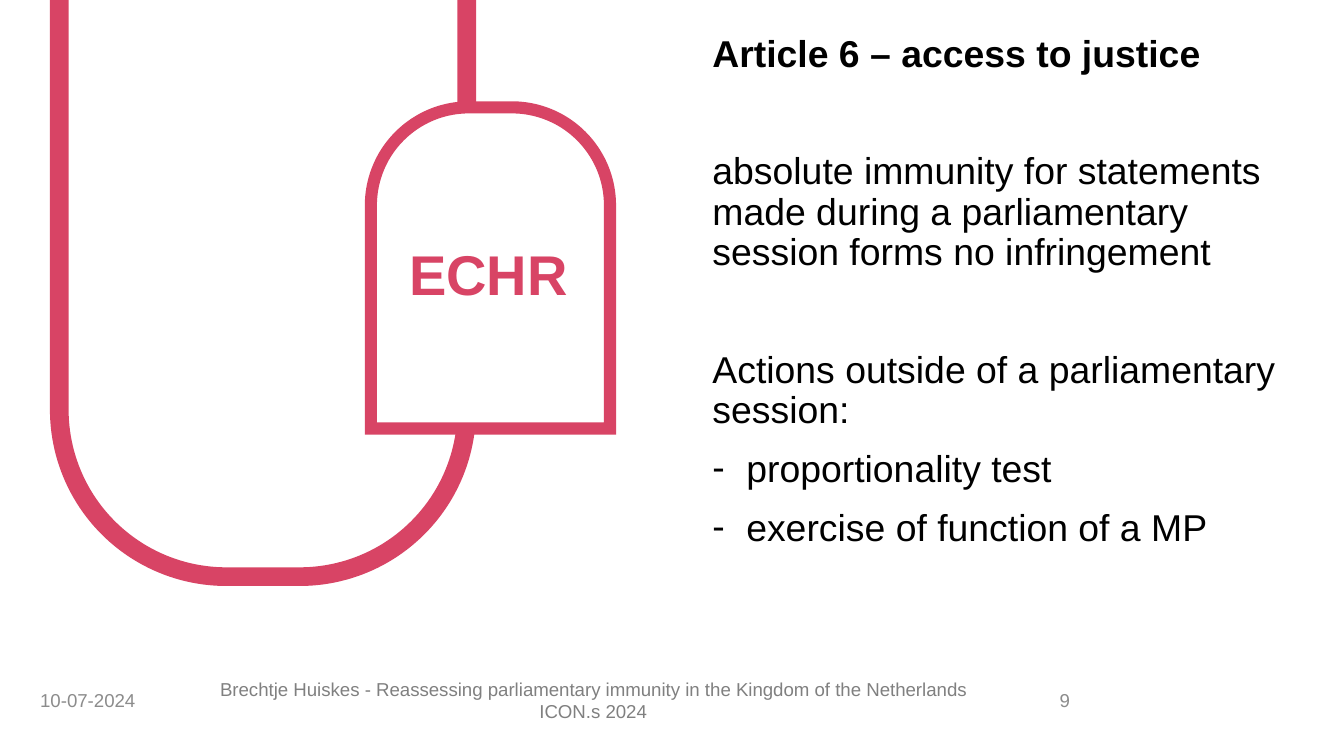
"""Build the slide on Article 6 ECHR and access to justice."""
from dataclasses import dataclass
from typing import Optional

from lxml.etree import SubElement
from pptx import Presentation
from pptx.dml.color import RGBColor
from pptx.enum.shapes import MSO_SHAPE
from pptx.enum.text import MSO_ANCHOR, MSO_AUTO_SIZE, PP_ALIGN
from pptx.oxml.ns import qn
from pptx.shapes.autoshape import Shape
from pptx.slide import Slide
from pptx.util import Cm, Pt


@dataclass(frozen=True)
class Theme:
    """Colours, font and type sizes in points."""
    font: str = "Arial"
    rose: str = "D84465"
    white: str = "FFFFFF"
    black: str = "000000"
    pale: str = "8C8C8C"
    grey: str = "808080"
    title: int = 30
    body: int = 20
    small: int = 10


@dataclass(frozen=True)
class Box:
    """Place and size in centimetres."""
    left: float
    top: float
    width: float
    height: float


@dataclass(frozen=True)
class Arch:
    """Outline with two round corners."""
    box: Box
    line: float
    turn: int = 0
    fill: Optional[str] = None


@dataclass(frozen=True)
class Item:
    """One paragraph of the body."""
    text: str
    gap: float = 10
    bold: bool = False
    dash: bool = False


@dataclass(frozen=True)
class Note:
    """One text in the footer row."""
    text: str
    left: float
    width: float
    align: PP_ALIGN
    tint: str


THEME = Theme()
WIDE_GAP = 41.5
INDENT = Cm(0.64)
FOOT_TOP, FOOT_HEIGHT = 12.85, 0.76
TITLE_BOX = Box(7.11, 2.44, 4.24, 5.61)
BODY_BOX = Box(13.21, 0.53, 11.71, 11)

ARCHES = [
    Arch(Box(1.12, -0.56, 7.7, 11.46), 10, turn=180),
    Arch(Box(7.01, 2.03, 4.52, 6.07), 6.5, fill=THEME.white),
]
ITEMS = [
    Item("Article 6 – access to justice", gap=0, bold=True),
    Item("absolute immunity for statements made during a parliamentary "
         "session forms no infringement", gap=WIDE_GAP),
    Item("Actions outside of a parliamentary session:", gap=WIDE_GAP),
    Item("proportionality test", dash=True),
    Item("exercise of function of a MP", dash=True),
]
NOTES = [
    Note("10-07-2024", 0.51, 2.46, PP_ALIGN.LEFT, THEME.pale),
    Note("Brechtje Huiskes - Reassessing parliamentary immunity in the "
         "Kingdom of the Netherlands ICON.s 2024",
         3.45, 15.52, PP_ALIGN.CENTER, THEME.grey),
    Note("9", 19.33, 1.14, PP_ALIGN.RIGHT, THEME.pale),
]


def place(shape: Shape, box: Box) -> None:
    """Move and size a shape."""
    shape.left, shape.top = Cm(box.left), Cm(box.top)
    shape.width, shape.height = Cm(box.width), Cm(box.height)


def set_frame(shape: Shape, anchor: MSO_ANCHOR) -> None:
    """Wrap the text at a fixed size."""
    frame = shape.text_frame
    frame.word_wrap = True
    frame.auto_size = MSO_AUTO_SIZE.NONE
    frame.vertical_anchor = anchor


def style(para, size: int, tint: str, bold: bool = False) -> None:
    """Format each run of a paragraph."""
    for run in para.runs:
        run.font.name = THEME.font
        run.font.size = Pt(size)
        run.font.bold = bold
        run.font.color.rgb = RGBColor.from_string(tint)


def draw_arch(slide: Slide, arch: Arch) -> None:
    """Draw an arch behind the title."""
    shape = slide.shapes.add_shape(MSO_SHAPE.ROUND_2_SAME_RECTANGLE, 0, 0, 0, 0)
    place(shape, arch.box)
    shape.rotation = arch.turn
    shape.adjustments[0] = 0.41
    shape.shadow.inherit = False
    if arch.fill:
        shape.fill.solid()
        shape.fill.fore_color.rgb = RGBColor.from_string(arch.fill)
    else:
        shape.fill.background()
    shape.line.color.rgb = RGBColor.from_string(THEME.rose)
    shape.line.width = Pt(arch.line)
    SubElement(shape.element.spPr.find(qn("a:ln")), qn("a:miter"), lim="800000")
    slide.shapes.title.element.addprevious(shape.element)


def draw_title(slide: Slide) -> None:
    """Fill the title in the tag."""
    title = slide.shapes.title
    place(title, TITLE_BOX)
    set_frame(title, MSO_ANCHOR.MIDDLE)
    title.text_frame.text = "ECHR"
    para = title.text_frame.paragraphs[0]
    para.alignment = PP_ALIGN.CENTER
    para.line_spacing = 0.9
    style(para, THEME.title, THEME.rose, bold=True)


def draw_body(slide: Slide) -> None:
    """Fill the body with its items."""
    body = slide.placeholders[1]
    place(body, BODY_BOX)
    set_frame(body, MSO_ANCHOR.TOP)
    frame = body.text_frame
    for rank, item in enumerate(ITEMS):
        para = frame.add_paragraph() if rank else frame.paragraphs[0]
        para.text = item.text
        props = para._p.get_or_add_pPr()
        inset = INDENT if item.dash else 0
        props.set("marL", str(inset))
        props.set("indent", str(-inset))
        if item.dash:
            SubElement(props, qn("a:buChar"), char="-")
        else:
            SubElement(props, qn("a:buNone"))
        para.line_spacing = 0.9
        para.space_before = Pt(item.gap)
        style(para, THEME.body, THEME.black, item.bold)


def draw_note(slide: Slide, note: Note) -> None:
    """Add one text to the footer row."""
    shape = slide.shapes.add_textbox(0, 0, 0, 0)
    place(shape, Box(note.left, FOOT_TOP, note.width, FOOT_HEIGHT))
    set_frame(shape, MSO_ANCHOR.MIDDLE)
    shape.text_frame.text = note.text
    para = shape.text_frame.paragraphs[0]
    para.alignment = note.align
    style(para, THEME.small, note.tint)


def main() -> None:
    """Build and save the deck."""
    deck = Presentation()
    deck.slide_width, deck.slide_height = Cm(25.4), Cm(14.29)
    slide = deck.slides.add_slide(deck.slide_layouts[1])
    for arch in ARCHES:
        draw_arch(slide, arch)
    draw_title(slide)
    draw_body(slide)
    for note in NOTES:
        draw_note(slide, note)
    deck.save("out.pptx")


if __name__ == "__main__":
    main()
